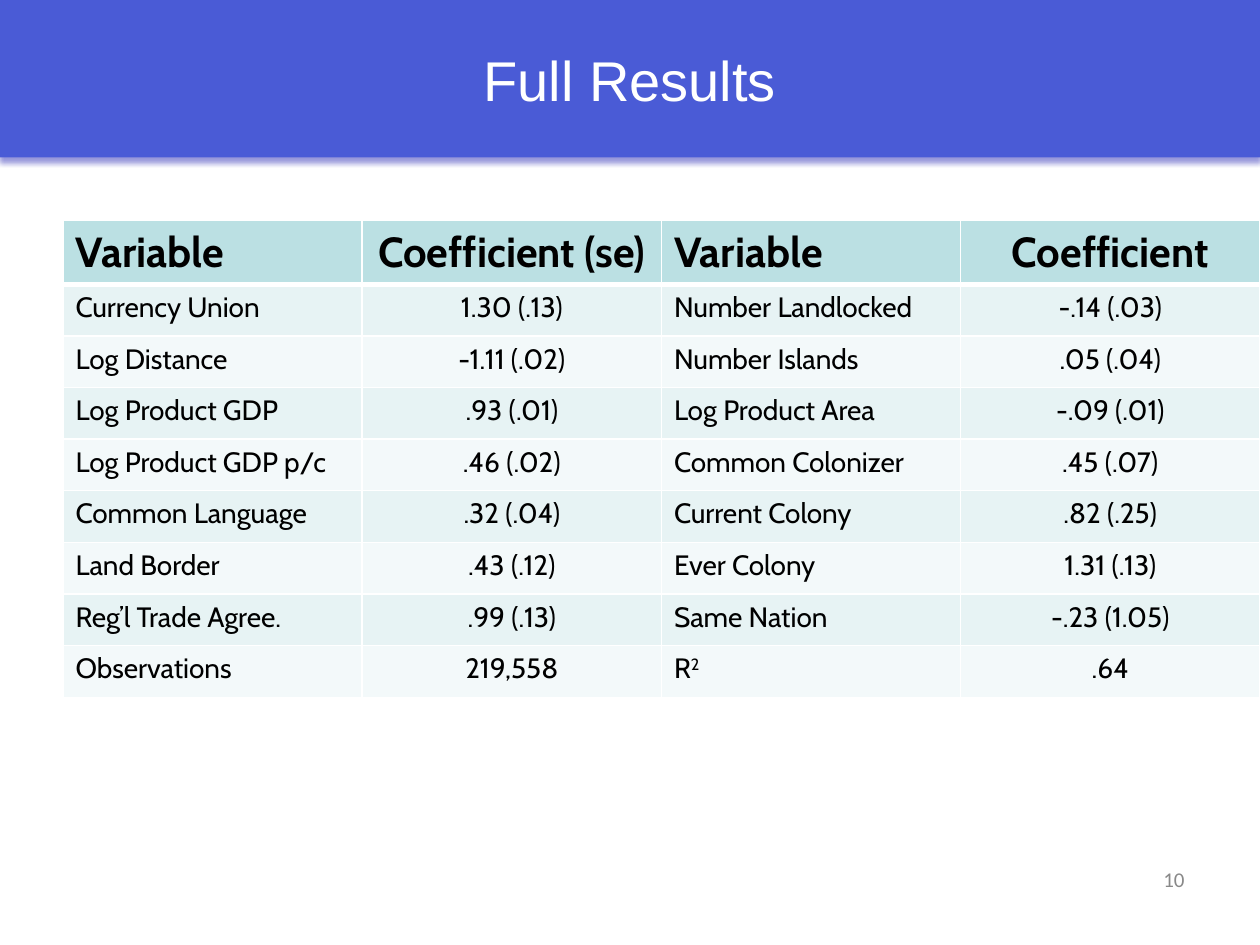
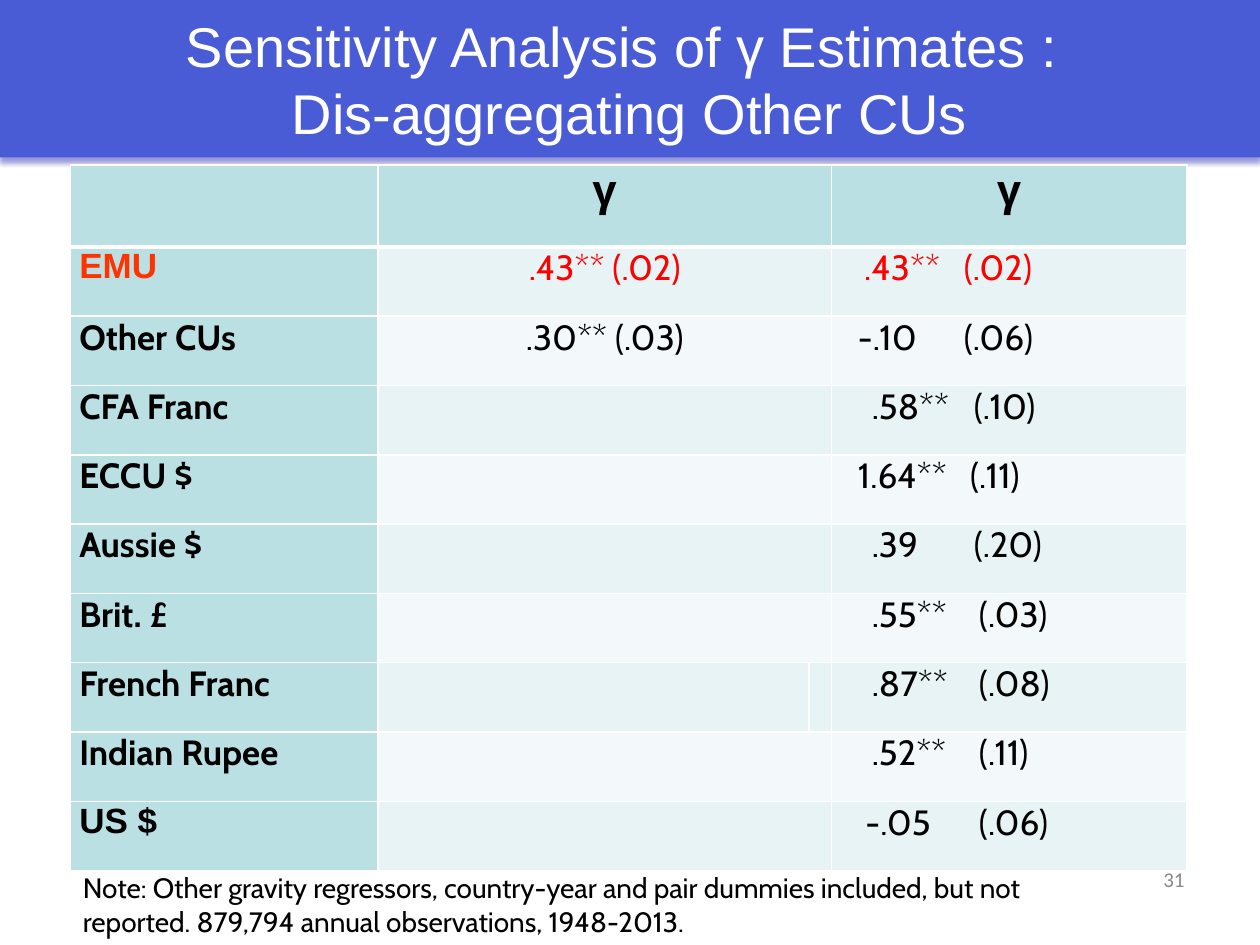
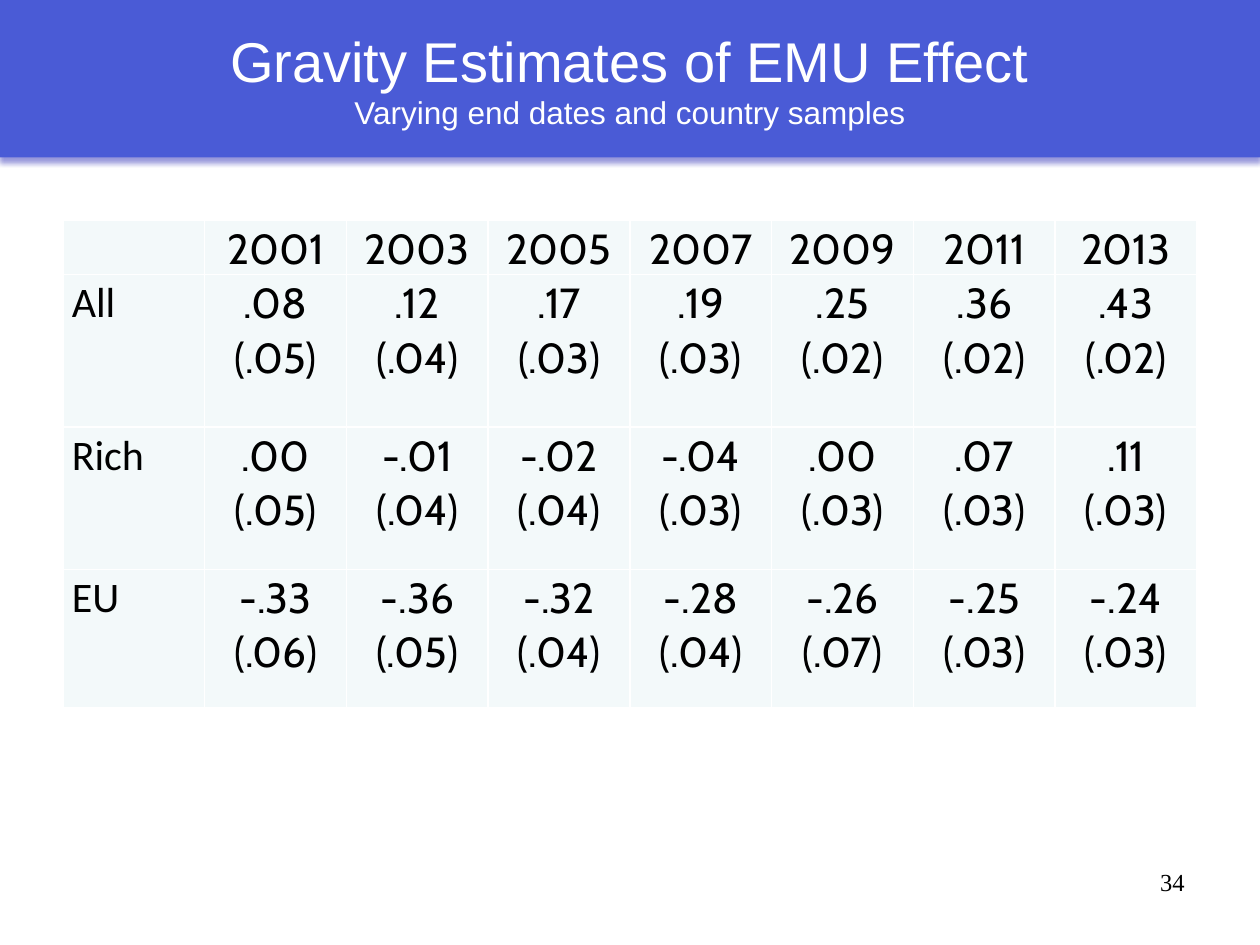
import pptx
import pptx.dml.color
import pptx.enum.shapes
import pptx.enum.text
import pptx.oxml.ns
import pptx.util
from lxml import etree

Inches = pptx.util.Inches
Pt = pptx.util.Pt
RGBColor = pptx.dml.color.RGBColor
ALIGN = pptx.enum.text.PP_ALIGN
ANCHOR = pptx.enum.text.MSO_ANCHOR
qn = pptx.oxml.ns.qn

BAND_BLUE = RGBColor(0x4A, 0x5B, 0xD6)
SHADOW_BLUE = RGBColor(0x33, 0x33, 0xB8)
WHITE = RGBColor(0xFF, 0xFF, 0xFF)
BLACK = RGBColor(0x00, 0x00, 0x00)
GREY = RGBColor(0x89, 0x89, 0x89)
RED = RGBColor(0xFF, 0x00, 0x00)
ORANGE = RGBColor(0xFF, 0x33, 0x00)
TEAL = RGBColor(0xBB, 0xE0, 0xE3)
TINT = RGBColor(0xE7, 0xF3, 0xF4)
PALE = RGBColor(0xF3, 0xF9, 0xFA)

FULL_RESULTS = [
    ("Variable", "Coefficient (se)", "Variable", "Coefficient"),
    ("Currency Union", "1.30 (.13)", "Number Landlocked", "-.14 (.03)"),
    ("Log Distance", "-1.11 (.02)", "Number Islands", ".05 (.04)"),
    ("Log Product GDP", ".93 (.01)", "Log Product Area", "-.09 (.01)"),
    ("Log Product GDP p/c", ".46 (.02)", "Common Colonizer", ".45 (.07)"),
    ("Common Language", ".32 (.04)", "Current Colony", ".82 (.25)"),
    ("Land Border", ".43 (.12)", "Ever Colony", "1.31 (.13)"),
    ("Reg’l Trade Agree.", ".99 (.13)", "Same Nation", "-.23 (1.05)"),
    ("Observations", "219,558", "R", ".64"),
]
UNIONS = [
    ("EMU", ".43** (.02)", ".43**", "(.02)", (0.19, 0.98)),
    ("Other CUs", ".30** (.03)", "-.10", "(.06)", (0.14, 0.98)),
    ("CFA Franc", "", ".58**", "(.10)", (0.25, 1.06)),
    ("ECCU $", "", "1.64**", "(.11)", (0.14, 1.03)),
    ("Aussie $", "", ".39", "(.20)", (0.25, 1.06)),
    ("Brit. £", "", ".55**", "(.03)", (0.25, 1.1)),
    ("French Franc", "", ".87**", "(.08)", (0.25, 1.1)),
    ("Indian Rupee", "", ".52**", "(.11)", (0.25, 1.1)),
    ("US $", "", "-.05", "(.06)", (0.2, 1.1)),
]
YEARS = ("2001", "2003", "2005", "2007", "2009", "2011", "2013")
SAMPLES = [
    ("All", (".08", ".12", ".17", ".19", ".25", ".36", ".43"),
     ("(.05)", "(.04)", "(.03)", "(.03)", "(.02)", "(.02)", "(.02)")),
    ("Rich", (".00", "-.01", "-.02", "-.04", ".00", ".07", ".11"),
     ("(.05)", "(.04)", "(.04)", "(.03)", "(.03)", "(.03)", "(.03)")),
    ("EU", ("-.33", "-.36", "-.32", "-.28", "-.26", "-.25", "-.24"),
     ("(.06)", "(.05)", "(.04)", "(.04)", "(.07)", "(.03)", "(.03)")),
]


def add_run(p, text, size, font="Cabin", color=BLACK, bold=False):
    """Append a formatted run to a paragraph."""
    r = p.add_run()
    r.text = text
    r.font.size = Pt(size)
    r.font.name = font
    r.font.color.rgb = color
    r.font.bold = bold
    return r


def add_title(s, lines):
    """Draw the shadowed title band with its (text, size) lines."""
    sp = s.shapes.add_shape(pptx.enum.shapes.MSO_SHAPE.RECTANGLE,
                            0, 0, Inches(10), Inches(1.25))
    sp.fill.solid()
    sp.fill.fore_color.rgb = BAND_BLUE
    sp.line.fill.background()
    sp.shadow.inherit = False
    effects = sp._element.spPr.find(qn("a:effectLst"))
    shadow = etree.SubElement(effects, qn("a:outerShdw"), blurRad=str(Inches(0.04)),
                              dist=str(Inches(0.04)), dir="5400000", rotWithShape="0")
    color = etree.SubElement(shadow, qn("a:srgbClr"), val=str(SHADOW_BLUE))
    etree.SubElement(color, qn("a:alpha"), val="50000")
    tf = sp.text_frame
    tf.word_wrap = True
    tf.vertical_anchor = ANCHOR.MIDDLE
    p = tf.paragraphs[0]
    p.alignment = ALIGN.CENTER
    for i, (text, size) in enumerate(lines):
        if i:
            p.add_line_break()
        add_run(p, text, size, "Arial", WHITE)


def add_text(s, box, text, size, font="Cabin", color=BLACK, align=ALIGN.LEFT):
    """Add a wrapped one-paragraph text box."""
    tf = s.shapes.add_textbox(*map(Inches, box)).text_frame
    tf.word_wrap = True
    p = tf.paragraphs[0]
    p.alignment = align
    add_run(p, text, size, font, color)


def add_number(s, number, size=12, font="Calibri", color=GREY):
    """Add the slide number at the lower right."""
    add_text(s, (7.17, 6.83, 2.33, 0.52), number, size, font, color, ALIGN.RIGHT)


def add_grid(s, left, top, widths, heights):
    """Add an unstyled table with given column widths and row heights."""
    frame = s.shapes.add_table(len(heights), len(widths), Inches(left), Inches(top),
                               Inches(sum(widths)), Inches(sum(heights)))
    table = frame.table
    table.first_row = False
    table.horz_banding = False
    for column, width in zip(table.columns, widths):
        column.width = Inches(width)
    for row, height in zip(table.rows, heights):
        row.height = Inches(height)
    return table


def style_cell(cell, fill, bottom=1, tight=False):
    """Give a cell white borders, a fill and optionally tight margins."""
    tcPr = cell._tc.get_or_add_tcPr()
    for side, width in (("L", 1), ("R", 1), ("T", 1), ("B", bottom)):
        ln = etree.SubElement(tcPr, qn("a:ln" + side), w=str(Pt(width)))
        solid = etree.SubElement(ln, qn("a:solidFill"))
        etree.SubElement(solid, qn("a:srgbClr"), val=str(WHITE))
    cell.fill.solid()
    cell.fill.fore_color.rgb = fill
    if tight:
        cell.margin_left = cell.margin_right = Inches(0.07)
        cell.margin_top = cell.margin_bottom = 0


def write_cell(cell, lines, size, align=ALIGN.LEFT, spacing=None, **font):
    """Write one paragraph per line and return the last paragraph."""
    tf = cell.text_frame
    for i, text in enumerate(lines):
        p = tf.add_paragraph() if i else tf.paragraphs[0]
        p.alignment = align
        if spacing:
            p.line_spacing = spacing
        add_run(p, text, size, **font)
    return p


def set_tabs(p, stops):
    """Set left tab stops on a paragraph."""
    tabs = etree.SubElement(p._p.get_or_add_pPr(), qn("a:tabLst"))
    for stop in stops:
        etree.SubElement(tabs, qn("a:tab"), pos=str(Inches(stop)), algn="l")


def band_fill(row):
    """Return the fill of a table row, header first, then alternating."""
    return TEAL if row == 0 else TINT if row % 2 else PALE


def full_results(s):
    """Build the table of all regression coefficients."""
    add_title(s, [("Full Results", 32)])
    table = add_grid(s, 0.5, 1.75, [2.375] * 4, [0.41] * len(FULL_RESULTS))
    for i, row in enumerate(FULL_RESULTS):
        for j, text in enumerate(row):
            cell = table.cell(i, j)
            style_cell(cell, band_fill(i), 1 if i else 3)
            p = write_cell(cell, [text], 16 if i else 24,
                           ALIGN.CENTER if j % 2 else ALIGN.LEFT, bold=i == 0)
            if text == "R":
                r = add_run(p, "2", 16)
                r._r.get_or_add_rPr().set("baseline", "30000")
    add_number(s, "10")


def sensitivity(s):
    """Build the table of estimates by currency union."""
    add_title(s, [("Sensitivity Analysis of γ Estimates : ", 32),
                  ("Dis-aggregating Other CUs", 32)])
    add_number(s, "31")
    table = add_grid(s, 0.56, 1.31, [2.44, 3.42, 0.18, 2.82],
                     [0.65] + [0.55] * len(UNIONS))
    for i in range(len(UNIONS) + 1):
        for j in range(4):
            style_cell(table.cell(i, j), band_fill(i) if j else TEAL, 1 if i else 3, True)
        if i == 0 or UNIONS[i - 1][0] != "French Franc":
            table.cell(i, 1).merge(table.cell(i, 2))
    for j in (1, 3):
        write_cell(table.cell(0, j), ["γ"], 24, ALIGN.CENTER, bold=True)
    for i, (name, pooled, value, error, stops) in enumerate(UNIONS, 1):
        emu = name == "EMU"
        color = RED if emu else BLACK
        write_cell(table.cell(i, 0), [name], 20, bold=True,
                   font="Arial" if name in ("EMU", "US $") else "Cabin",
                   color=ORANGE if emu else BLACK)
        if pooled:
            write_cell(table.cell(i, 1), [pooled], 20, ALIGN.CENTER, color=color)
        p = write_cell(table.cell(i, 3), [f"\t{value}\t{error}"], 20, color=color)
        set_tabs(p, stops)
    add_text(s, (0.56, 6.86, 7.83, 0.64),
             "Note: Other gravity regressors, country-year and pair dummies included, "
             "but not reported. 879,794 annual observations, 1948-2013.", 16)


def emu_effect(s):
    """Build the table of EMU effects by end date and sample."""
    add_title(s, [("Gravity Estimates of EMU Effect", 32),
                  ("Varying end dates and country samples", 18)])
    table = add_grid(s, 0.5, 1.75, [1.125] * 8, [0.39, 1.21, 1.13, 1.1])
    for cell in table.iter_cells():
        style_cell(cell, PALE, tight=True)
    for j, year in enumerate(YEARS, 1):
        write_cell(table.cell(0, j), [year], 24, ALIGN.CENTER, 1.07)
    for i, (name, values, errors) in enumerate(SAMPLES, 1):
        write_cell(table.cell(i, 0), [name], 24, spacing=1.07, font="Calibri")
        for j, pair in enumerate(zip(values, errors), 1):
            write_cell(table.cell(i, j), pair, 24, ALIGN.CENTER, 1.07)
    add_number(s, "34", 14, "Times New Roman", BLACK)


def main():
    """Build and save the presentation."""
    prs = pptx.Presentation()
    prs.slide_width = Inches(10)
    prs.slide_height = Inches(7.5)
    for build in (full_results, sensitivity, emu_effect):
        build(prs.slides.add_slide(prs.slide_layouts[6]))
    prs.save("out.pptx")


if __name__ == "__main__":
    main()
